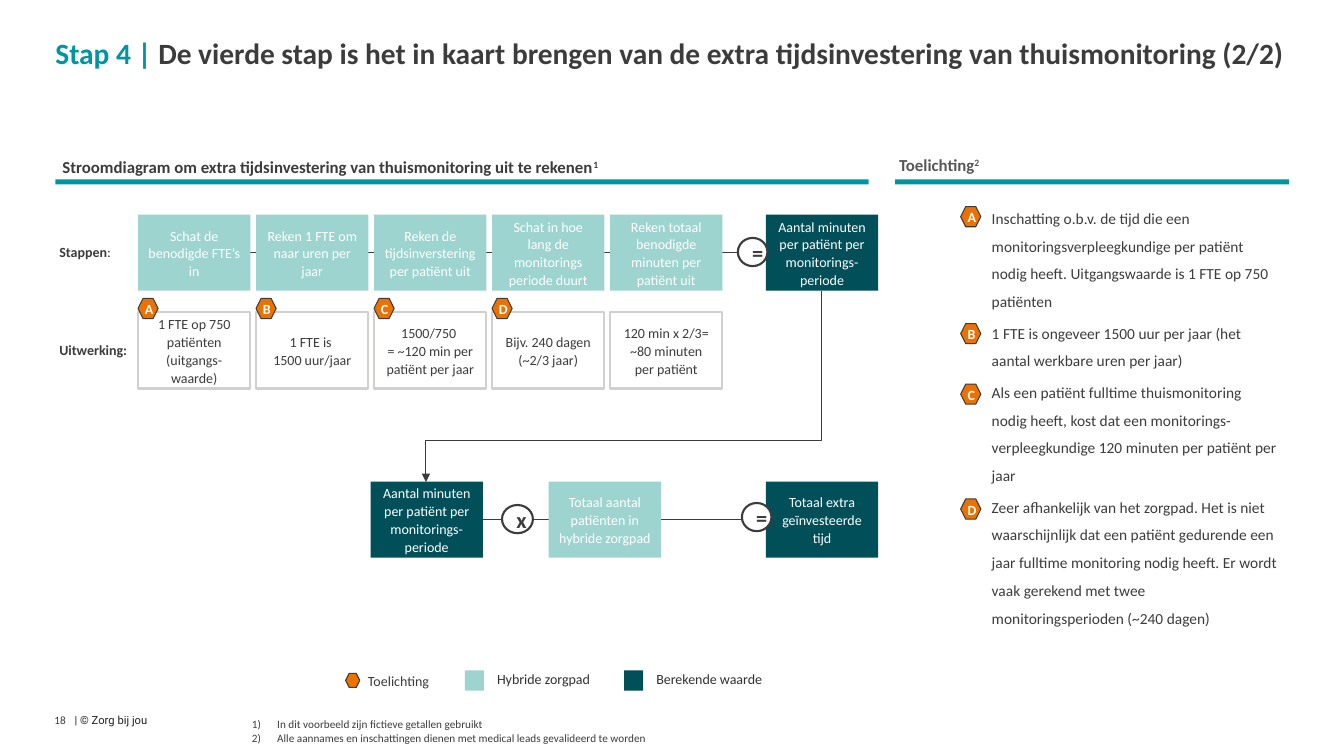
from dataclasses import dataclass

import pptx
import pptx.dml.color
import pptx.enum.shapes
import pptx.enum.text
import pptx.oxml
import pptx.oxml.ns
import pptx.util

RGBColor = pptx.dml.color.RGBColor
TEAL = RGBColor(0x00, 0x96, 0xA1)
LIGHT_TEAL = RGBColor(0x9D, 0xD4, 0xCF)
DARK_TEAL = RGBColor(0x00, 0x4F, 0x59)
ORANGE = RGBColor(0xEB, 0x71, 0x00)
INK = RGBColor(0x3C, 0x3C, 0x3C)
LEGEND_INK = RGBColor(0x31, 0x31, 0x31)
FOOTER_INK = RGBColor(0x20, 0x21, 0x24)
HEADING_GREY = RGBColor(0x57, 0x57, 0x57)
BORDER_GREY = RGBColor(0xD0, 0xD0, 0xCE)
WHITE = RGBColor(0xFF, 0xFF, 0xFF)

SHAPE = pptx.enum.shapes.MSO_SHAPE
CONNECTOR = pptx.enum.shapes.MSO_CONNECTOR
ANCHOR = pptx.enum.text.MSO_ANCHOR
ALIGN = pptx.enum.text.PP_ALIGN
INSET = 0.1
LINE_SPACING = 1.06

presentation = pptx.Presentation()
presentation.slide_width = pptx.util.Inches(13.33)
presentation.slide_height = pptx.util.Inches(7.5)
slide = presentation.slides.add_slide(presentation.slide_layouts[5])

# The slide is a grid of 100 columns by 100 rows
COLUMN = presentation.slide_width / 100
ROW = presentation.slide_height / 100

# The flow chart has its own steps on that grid
FLOW_LEFT, FLOW_TOP = 10.27, 28.4
STEP_ACROSS, STEP_DOWN = 8.78, 12.93
BOX_WIDTH, BOX_HEIGHT = 8.36, 10.07


@dataclass
class Area:
    left: float
    top: float
    width: float
    height: float

    def lengths(self) -> tuple:
        return (round(self.left * COLUMN), round(self.top * ROW),
                round(self.width * COLUMN), round(self.height * ROW))


@dataclass
class Style:
    size: float = 10
    color: RGBColor = INK
    bold: bool = False
    align: ALIGN = ALIGN.LEFT
    anchor: ANCHOR = ANCHOR.TOP
    spacing: float = 1.0
    inset: float = 0
    font: str = "Calibri"


@dataclass
class FlowBox:
    step: float
    row: float
    paragraphs: tuple
    fill: RGBColor
    border: RGBColor | None = None


def format_run(run, style: Style) -> None:
    run.font.size = pptx.util.Pt(style.size)
    run.font.name = style.font
    run.font.bold = style.bold
    run.font.color.rgb = style.color


def write(shape, paragraphs: tuple, style: Style) -> None:
    frame = shape.text_frame
    frame.word_wrap = True
    frame.auto_size = pptx.enum.text.MSO_AUTO_SIZE.NONE
    frame.vertical_anchor = style.anchor
    frame.margin_left = frame.margin_right = pptx.util.Inches(style.inset)
    frame.margin_top = frame.margin_bottom = pptx.util.Inches(style.inset)
    for index, text in enumerate(paragraphs):
        paragraph = frame.add_paragraph() if index else frame.paragraphs[0]
        paragraph.text = text
        paragraph.alignment = style.align
        paragraph.line_spacing = style.spacing
        for run in paragraph.runs:
            format_run(run, style)


def draw_text(area: Area, paragraphs: tuple, style: Style):
    box = slide.shapes.add_textbox(*area.lengths())
    write(box, paragraphs, style)
    return box


def draw_shape(kind, area: Area, fill: RGBColor, border: RGBColor | None = None, weight: float = 0.75):
    shape = slide.shapes.add_shape(kind, *area.lengths())
    shape.shadow.inherit = False
    shape.fill.solid()
    shape.fill.fore_color.rgb = fill
    if border is None:
        shape.line.fill.background()
    else:
        shape.line.color.rgb = border
        shape.line.width = pptx.util.Pt(weight)
    return shape


def centred(size: float, color: RGBColor, bold: bool = False) -> Style:
    return Style(size, color, bold, ALIGN.CENTER, ANCHOR.MIDDLE, LINE_SPACING, INSET)


def draw_flow_box(box: FlowBox):
    area = Area(FLOW_LEFT + box.step * STEP_ACROSS, FLOW_TOP + box.row * STEP_DOWN, BOX_WIDTH, BOX_HEIGHT)
    shape = draw_shape(SHAPE.RECTANGLE, area, box.fill, box.border, 1.5)
    write(shape, box.paragraphs, centred(10, INK if box.border else WHITE))
    return shape


def draw_marker(letter: str, left: float, top: float) -> None:
    marker = draw_shape(SHAPE.HEXAGON, Area(left, top, 1.5, 2.67), ORANGE, INK)
    write(marker, (letter,), centred(10, WHITE, True))


def draw_connector(kind, area: Area, arrow: bool):
    left, top, width, height = area.lengths()
    connector = slide.shapes.add_connector(kind, left, top, left + width, top + height)
    connector.line.color.rgb = INK
    connector.line.width = pptx.util.Pt(0.75)
    if arrow:
        pptx.oxml.ns.qn("a:tailEnd")
        line = connector.line._get_or_add_ln()
        line.append(pptx.oxml.parse_xml(f'<a:tailEnd {pptx.oxml.ns.nsdecls("a")} type="triangle"/>'))
    connector._element.spPr.append(pptx.oxml.parse_xml(f'<a:effectLst {pptx.oxml.ns.nsdecls("a")}/>'))
    connector._element.getparent().insert(2, connector._element)  # behind the boxes
    return connector


def join(start, start_side: int, end, end_side: int, arrow: bool = False) -> None:
    connector = draw_connector(CONNECTOR.STRAIGHT, Area(0, 0, 1, 1), arrow)
    connector.begin_connect(start, start_side)
    connector.end_connect(end, end_side)


# Title
title = slide.shapes.title
title.left, title.top, title.width, title.height = Area(4.12, 4.67, 91.8, 4.93).lengths()
write(title, ("Stap 4 | ",), Style(21, TEAL, True))
title_run = title.text_frame.paragraphs[0].add_run()
title_run.text = "De vierde stap is het in kaart brengen van de extra tijdsinvestering van thuismonitoring (2/2)"
format_run(title_run, Style(21, INK, True))

# Section headings with their rules
for heading, note, color, area, rule in (
    ("Stroomdiagram om extra tijdsinvestering van thuismonitoring uit te rekenen", "1", INK,
     Area(4.65, 20.77, 55, 2.7), Area(4.12, 23.73, 60.52, 0.67)),
    ("Toelichting", "2", HEADING_GREY, Area(66.9, 20.53, 9.6, 2.7), Area(66.6, 23.73, 29.32, 0.67)),
):
    heading_style = Style(12, color, True)
    heading_box = draw_text(area, (heading,), heading_style)
    superscript = heading_box.text_frame.paragraphs[0].add_run()
    superscript.text = note
    format_run(superscript, heading_style)
    superscript.font._element.set("baseline", "30000")
    draw_shape(SHAPE.RECTANGLE, rule, TEAL)

# Flow chart: steps, worked values and results
STEPS = (("Schat de benodigde FTE’s in",), ("Reken 1 FTE om naar uren per jaar",),
         ("Reken de tijdsinverstering per patiënt uit",),
         ("Schat in hoe lang de monitorings", "periode duurt"),
         ("Reken totaal benodigde minuten per patiënt uit",))
VALUES = (("1 FTE op 750 patiënten (uitgangs-", "waarde)"), ("1 FTE is \n1500 uur/jaar",),
          ("1500/750 \n= ~120 min per patiënt per jaar",), ("Bijv. 240 dagen (~2/3 jaar)",),
          ("120 min x 2/3=", "~80 minuten per patiënt"))
step_boxes = [draw_flow_box(FlowBox(i, 0, text, LIGHT_TEAL)) for i, text in enumerate(STEPS)]
for index, value in enumerate(VALUES):
    draw_flow_box(FlowBox(index, 1, value, WHITE, BORDER_GREY))
minutes = draw_flow_box(FlowBox(5.32, 0, ("Aantal minuten per patiënt per monitorings-periode",), DARK_TEAL))
factor = draw_flow_box(FlowBox(1.97, 2.73, ("Aantal minuten per patiënt per monitorings-", "periode"), DARK_TEAL))
patients = draw_flow_box(FlowBox(3.48, 2.73, ("Totaal aantal patiënten in hybride zorgpad",), LIGHT_TEAL))
total = draw_flow_box(FlowBox(5.32, 2.73, ("Totaal extra geïnvesteerde tijd",), DARK_TEAL))

# Connectors
join(step_boxes[0], 1, minutes, 1, arrow=True)
join(factor, 3, patients, 1)
join(patients, 3, total, 1)
elbow = draw_connector(CONNECTOR.ELBOW, Area(39.32, 24.97, 14.2, 52.35), True)
elbow._element.spPr.xfrm.set("rot", str(90 * 60000))
guides = elbow._element.spPr.prstGeom.get_or_add_avLst()
guides.append(pptx.oxml.parse_xml(f'<a:gd {pptx.oxml.ns.nsdecls("a")} name="adj1" fmla="val 78500"/>'))

# Operators
for sign, left, top, width in (("=", 54.9, 31.47, 2.2), ("x", 37.35, 66.8, 2.3), ("=", 55.2, 66.53, 2.2)):
    circle = draw_shape(SHAPE.FLOWCHART_CONNECTOR, Area(left, top, width, 3.73), WHITE, INK, 1.5)
    write(circle, (sign,), centred(16, INK, True))

# Row labels
for row, label in enumerate(("Stappen", "Uitwerking:")):
    label_area = Area(3.68, FLOW_TOP - 0.2 + row * STEP_DOWN, 7.05, BOX_HEIGHT)
    label_box = draw_text(label_area, (label,), Style(10, INK, True, anchor=ANCHOR.MIDDLE,
                                                      spacing=LINE_SPACING, inset=INSET))
    if row == 0:
        colon = label_box.text_frame.paragraphs[0].add_run()
        colon.text = ":"
        format_run(colon, Style())

# Explanation
EXPLANATIONS = (
    "Inschatting o.b.v. de tijd die een monitoringsverpleegkundige per patiënt nodig heeft. "
    "Uitgangswaarde is 1 FTE op 750 patiënten",
    "1 FTE is ongeveer 1500 uur per jaar (het aantal werkbare uren per jaar)",
    "Als een patiënt fulltime thuismonitoring nodig heeft, kost dat een monitorings-verpleegkundige "
    "120 minuten per patiënt per jaar",
    "Zeer afhankelijk van het zorgpad. Het is niet waarschijnlijk dat een patiënt gedurende een jaar "
    "fulltime monitoring nodig heeft. Er wordt vaak gerekend met twee monitoringsperioden (~240 dagen)")
explanation = draw_text(Area(71.18, 25.07, 24.75, 66.67), EXPLANATIONS, Style(11, spacing=1.5, inset=INSET))
for index, paragraph in enumerate(explanation.text_frame.paragraphs):
    paragraph._p.get_or_add_pPr().set("marL", str(pptx.util.Inches(0.25)))
    if index:
        paragraph.space_before = pptx.util.Pt(2.75)

# Letter markers on the values and beside the explanation
for index, (letter, top) in enumerate(zip("ABCD", (27.33, 42.8, 50.8, 66))):
    draw_marker(letter, FLOW_LEFT + index * STEP_ACROSS, 39.47)
    draw_marker(letter, 71.48, top)

# Legend
draw_shape(SHAPE.HEXAGON, Area(25.72, 89.07, 1.05, 1.87), ORANGE, INK)
draw_text(Area(27.38, 88.93, 8, 2.27), ("Toelichting",), Style())
for label, color, left in (("Hybride zorgpad", LIGHT_TEAL, 34.58), ("Berekende waarde", DARK_TEAL, 46.43)):
    draw_shape(SHAPE.RECTANGLE, Area(left, 88.67, 1.42, 2.67), color)
    draw_text(Area(left + 2.4, 88.67, 14.47, 2.27), (label,), Style(10, LEGEND_INK))

# Footer and footnotes
draw_text(Area(4.05, 94.4, 1.4, 1.73), ("18",), Style(8))
draw_text(Area(5.55, 94.4, 12, 1.73), ("| © Zorg bij jou",), Style(8, FOOTER_INK, font="Roboto"))
footnotes = draw_text(
    Area(18.75, 93.6, 58.8, 6.13),
    ("In dit voorbeeld zijn fictieve getallen gebruikt",
     "Alle aannames en inschattingen dienen met medical leads gevalideerd te worden"),
    Style(8, anchor=ANCHOR.MIDDLE, spacing=LINE_SPACING))
for paragraph in footnotes.text_frame.paragraphs:
    properties = paragraph._p.get_or_add_pPr()
    properties.set("marL", str(pptx.util.Inches(0.25)))
    properties.set("indent", str(-pptx.util.Inches(0.25)))
    properties.append(pptx.oxml.parse_xml(
        f'<a:buAutoNum {pptx.oxml.ns.nsdecls("a")} type="arabicParenR"/>'))

presentation.save("out.pptx")
